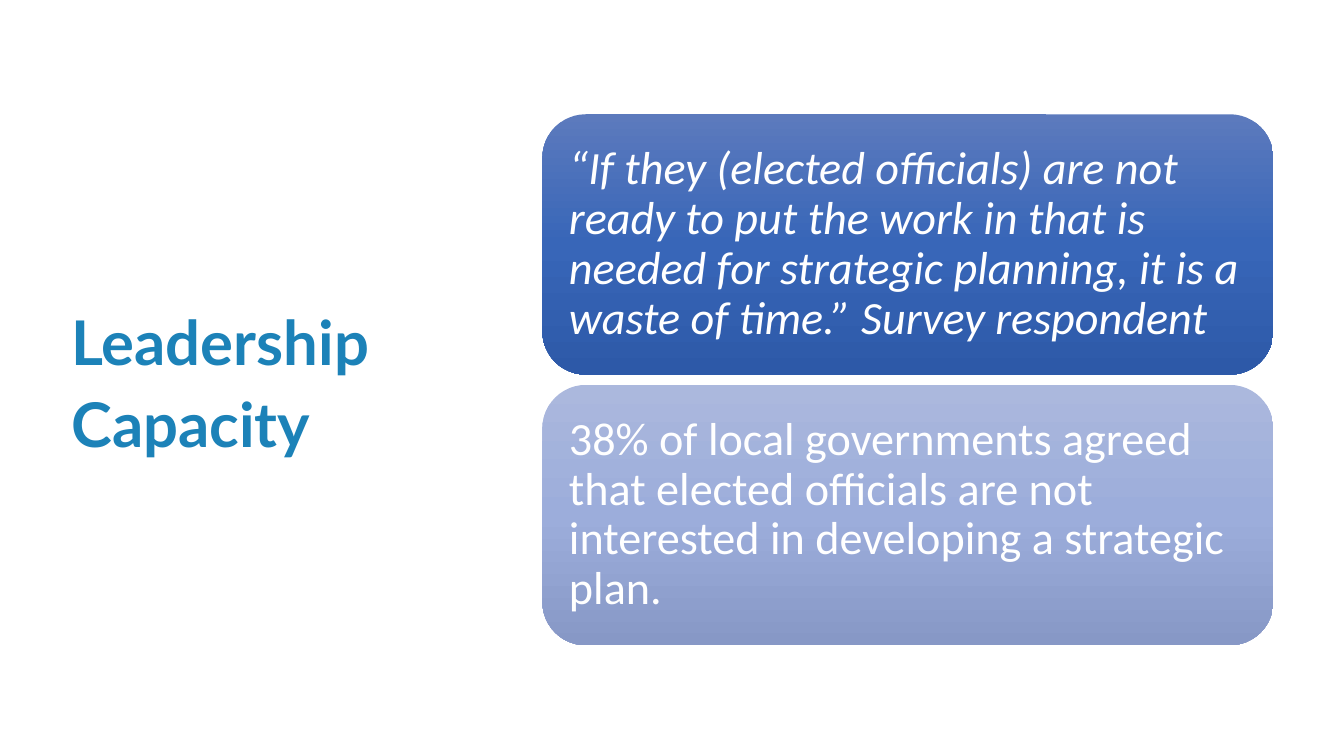
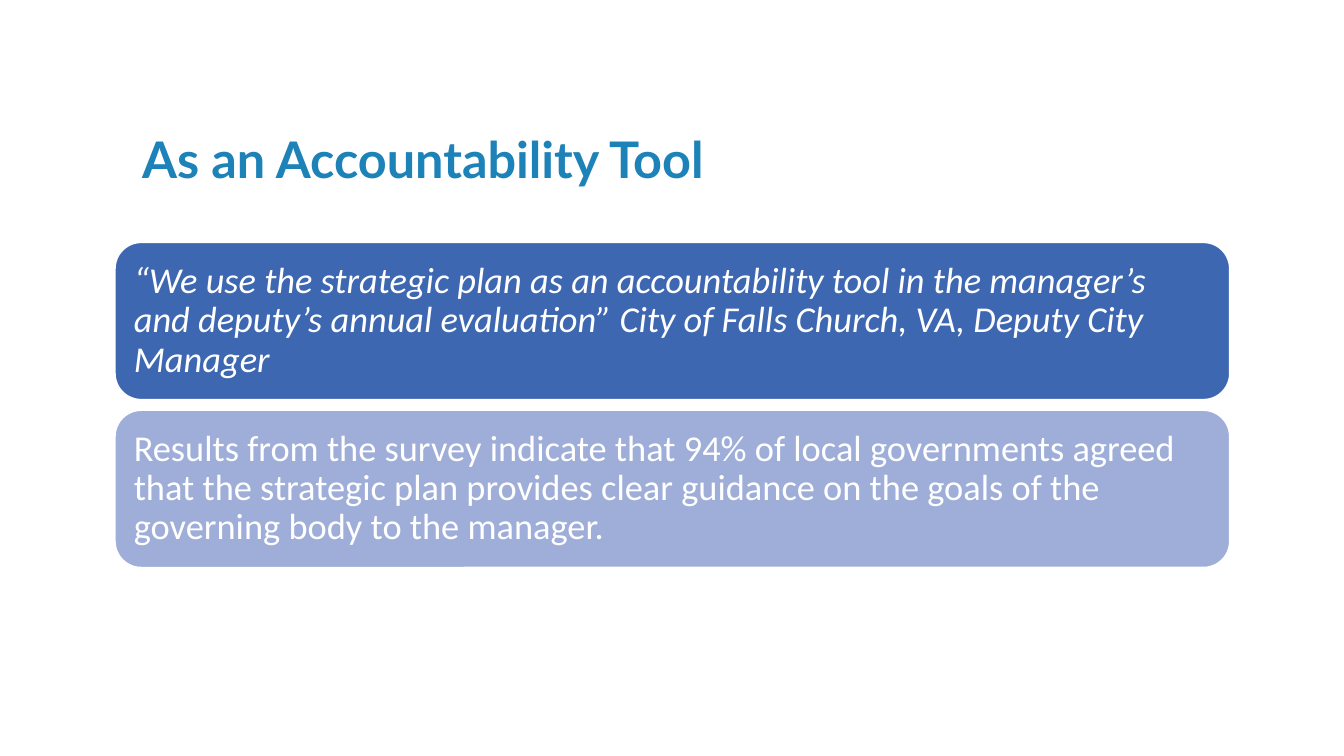
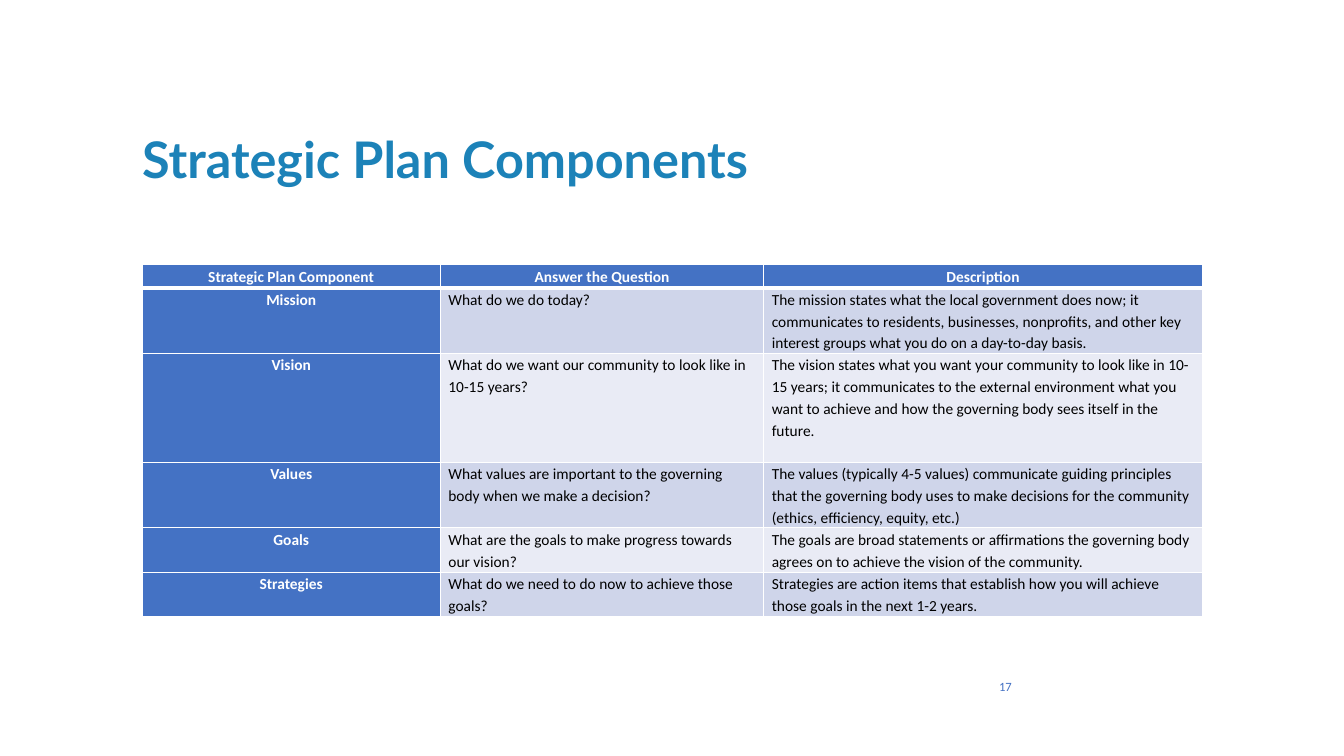
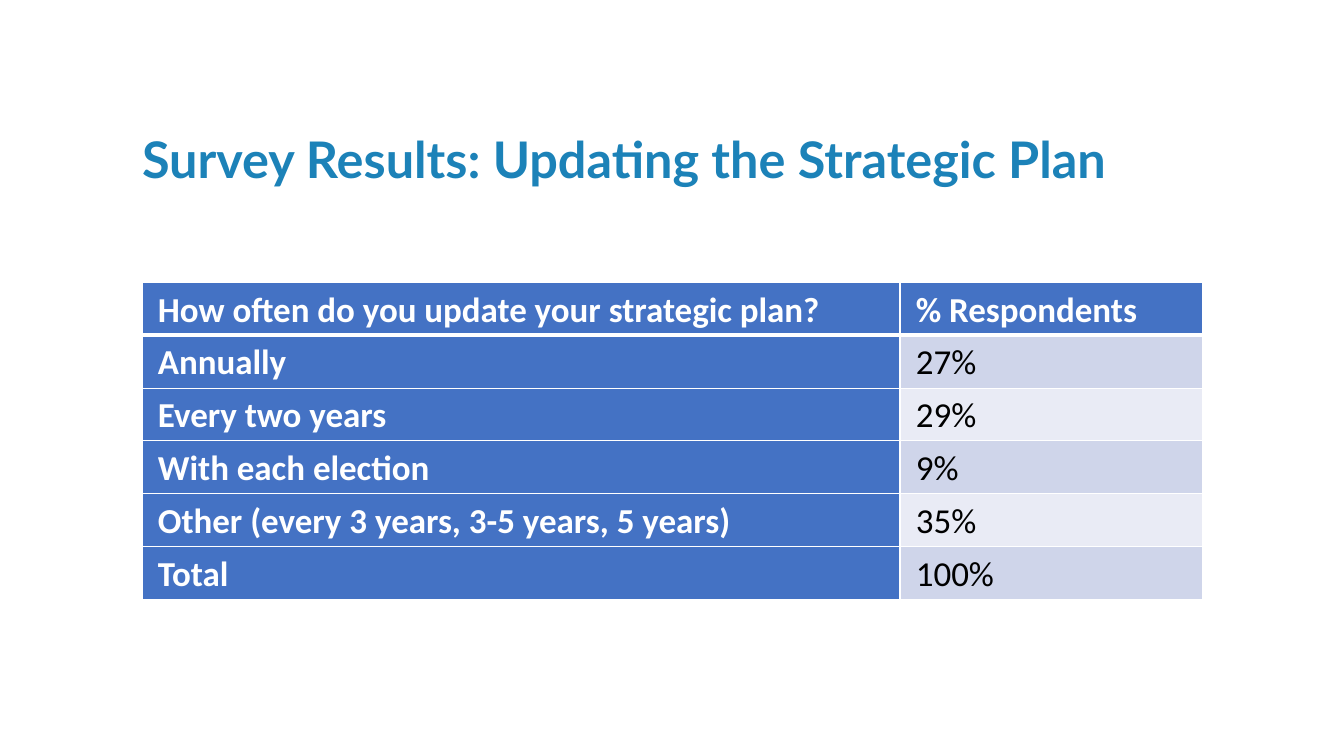
from copy import deepcopy
from dataclasses import dataclass

from lxml import etree
from pptx import Presentation
from pptx.dml.color import RGBColor
from pptx.enum.shapes import MSO_SHAPE
from pptx.enum.text import MSO_ANCHOR, MSO_AUTO_SIZE, PP_ALIGN
from pptx.oxml.ns import qn
from pptx.util import Cm, Pt

ROUNDED = MSO_SHAPE.ROUNDED_RECTANGLE
MIDDLE, BOTTOM = MSO_ANCHOR.MIDDLE, MSO_ANCHOR.BOTTOM
LEFT, CENTER, RIGHT = PP_ALIGN.LEFT, PP_ALIGN.CENTER, PP_ALIGN.RIGHT
NO_AUTOFIT = MSO_AUTO_SIZE.NONE
TITLE_ONLY = 5
EMU_PER_POINT = 12700


@dataclass(frozen=True)
class Theme:
    title_font: str = "Lato"
    body_font: str = "Calibri"
    title: str = "1C82B8"
    accent: str = "4472C4"
    white: str = "FFFFFF"
    black: str = "000000"
    bands: tuple = ("CFD5EA", "E9EBF5")
    gradient_cards: tuple = (("5C7ABD", "3866B8", "2D59A8"),
                             ("ABB8DD", "9CADDB", "8798C6"))
    plain_cards: tuple = (("3E67B2",), ("9FAED8",))
    side_title_size: int = 44
    title_size: int = 36
    large_card_size: int = 33
    card_size: int = 26
    large_table_size: int = 25
    table_size: int = 11
    number_size: int = 9


def color(value):
    return RGBColor.from_string(value)


class Deck:
    def __init__(self, theme):
        self.theme = theme
        self.presentation = Presentation()
        self.presentation.slide_width = Cm(33.87)
        self.presentation.slide_height = Cm(19.05)
        self.slide = None

    def format_text(self, text_frame, size, ink, font=None, bold=False,
                    italic=False, align=LEFT, spacing=1.0):
        for paragraph in text_frame.paragraphs:
            paragraph.alignment = align
            paragraph.line_spacing = spacing
            for run in paragraph.runs:
                run.font.name = font or self.theme.body_font
                run.font.size = Pt(size)
                run.font.bold = bold
                run.font.italic = italic
                run.font.color.rgb = color(ink)

    def set_margins(self, target, horizontal, vertical):
        target.margin_left = target.margin_right = Cm(horizontal)
        target.margin_top = target.margin_bottom = Cm(vertical)

    def place(self, shape, left, top, width, height):
        shape.left, shape.top = Cm(left), Cm(top)
        shape.width, shape.height = Cm(width), Cm(height)

    def add_slide(self, title, beside=False):
        """Start a slide with its title above the content or beside it."""
        layout = self.presentation.slide_layouts[TITLE_ONLY]
        self.slide = self.presentation.slides.add_slide(layout)
        shape = self.slide.shapes.title
        box = (1.8, 3.84, 9.86, 11.38) if beside else (3.58, 1.7, 28.32, 3.05)
        self.place(shape, *box)
        frame = shape.text_frame
        frame.text = title
        frame.word_wrap = True
        frame.auto_size = NO_AUTOFIT
        frame.vertical_anchor = MIDDLE if beside else BOTTOM
        self.set_margins(frame, 0, 0)
        size = self.theme.side_title_size if beside else self.theme.title_size
        self.format_text(frame, size, self.theme.title, self.theme.title_font,
                         bold=True, spacing=1.1)

    def fill_card(self, card, colors):
        """Fill with one colour, or with a downward gradient of several."""
        if len(colors) == 1:
            card.fill.solid()
            card.fill.fore_color.rgb = color(colors[0])
            card.line.color.rgb = color(self.theme.white)
            card.line.width = Pt(1)
            return
        card.line.fill.background()
        card.fill.gradient()
        card.fill.gradient_angle = 270
        stop_list = next(card._element.spPr.iter(qn("a:gsLst")))
        while len(stop_list) < len(colors):
            stop_list.append(deepcopy(stop_list[0]))
        for index, stop in enumerate(card.fill.gradient_stops):
            stop.position = index / (len(colors) - 1)
            stop.color.rgb = color(colors[index])

    def add_cards(self, texts, fills, box, pitch, size, margin):
        """Stack cards; the first one is a quotation in italics."""
        left, top, width, height = box
        for index, (text, colors) in enumerate(zip(texts, fills)):
            card = self.slide.shapes.add_shape(
                ROUNDED, Cm(left), Cm(top + index * pitch), Cm(width), Cm(height))
            card.shadow.inherit = False
            self.fill_card(card, colors)
            frame = card.text_frame
            frame.text = text
            frame.word_wrap = True
            frame.vertical_anchor = MIDDLE
            self.set_margins(frame, margin, margin)
            self.format_text(frame, size, self.theme.white,
                             italic=index == 0, spacing=0.9)

    def add_borders(self, cell, top, bottom):
        properties = cell._tc.get_or_add_tcPr()
        for side, points in (("L", 1), ("R", 1), ("T", top), ("B", bottom)):
            line = etree.SubElement(properties, qn(f"a:ln{side}"),
                                    w=str(points * EMU_PER_POINT))
            fill = etree.SubElement(line, qn("a:solidFill"))
            etree.SubElement(fill, qn("a:srgbClr"), val=self.theme.white)

    def add_table(self, rows, top, widths, heights, size, margin, label_align):
        """Add a table whose first row and first column are headings."""
        table = self.slide.shapes.add_table(
            len(rows), len(widths), Cm(3.58), Cm(top),
            Cm(sum(widths)), Cm(sum(heights))).table
        for column, width in zip(table.columns, widths):
            column.width = Cm(width)
        for row_index, (values, height) in enumerate(zip(rows, heights)):
            table.rows[row_index].height = Cm(height)
            for column_index, value in enumerate(values):
                cell = table.cell(row_index, column_index)
                heading = row_index == 0 or column_index == 0
                self.add_borders(cell, top=3 if row_index == 1 else 1,
                                 bottom=3 if row_index == 0 else 1)
                cell.fill.solid()
                band = self.theme.bands[(row_index - 1) % 2]
                cell.fill.fore_color.rgb = color(
                    self.theme.accent if heading else band)
                self.set_margins(cell, margin, 0)
                cell.text_frame.text = value
                self.format_text(
                    cell.text_frame, size,
                    self.theme.white if heading else self.theme.black,
                    bold=heading, align=label_align if heading else LEFT,
                    spacing=1.15)

    def add_slide_number(self, number):
        box = self.slide.shapes.add_textbox(Cm(23.85), Cm(16.79), Cm(1.9), Cm(1.02))
        frame = box.text_frame
        frame.text = str(number)
        frame.word_wrap = True
        frame.vertical_anchor = MIDDLE
        self.format_text(frame, self.theme.number_size, self.theme.accent,
                         align=RIGHT)


def main():
    theme = Theme()
    deck = Deck(theme)

    deck.add_slide("Leadership Capacity", beside=True)
    deck.add_cards(
        ["“If they (elected officials) are not ready to put the work in that is "
         "needed for strategic planning, it is a waste of time.” Survey respondent",
         "38% of local governments agreed that elected officials are not "
         "interested in developing a strategic plan."],
        theme.gradient_cards, (13.67, 2.88, 18.42, 6.56), 6.82,
        theme.large_card_size, 0.35)

    deck.add_slide("As an Accountability Tool")
    deck.add_cards(
        ["“We use the strategic plan as an accountability tool in the manager’s "
         "and deputy’s annual evaluation” City of Falls Church, VA, Deputy City "
         "Manager",
         "Results from the survey indicate that 94% of local governments agreed "
         "that the strategic plan provides clear guidance on the goals of the "
         "governing body to the manager."],
        theme.plain_cards, (2.9, 6.11, 28.09, 3.96), 4.23, theme.card_size, 0.28)

    deck.add_slide("Strategic Plan Components")
    deck.add_table(
        [("Strategic Plan Component", "Answer the Question", "Description"),
         ("Mission", "What do we do today?",
          "The mission states what the local government does now; it "
          "communicates to residents, businesses, nonprofits, and other key "
          "interest groups what you do on a day-to-day basis."),
         ("Vision", "What do we want our community to look like in 10-15 years?",
          "The vision states what you want your community to look like in 10-15 "
          "years; it communicates to the external environment what you want to "
          "achieve and how the governing body sees itself in the future."),
         ("Values",
          "What values are important to the governing body when we make a decision?",
          "The values (typically 4-5 values) communicate guiding principles that "
          "the governing body uses to make decisions for the community (ethics, "
          "efficiency, equity, etc.)"),
         ("Goals", "What are the goals to make progress towards our vision?",
          "The goals are broad statements or affirmations the governing body "
          "agrees on to achieve the vision of the community."),
         ("Strategies", "What do we need to do now to achieve those goals?",
          "Strategies are action items that establish how you will achieve those "
          "goals in the next 1-2 years.")],
        6.67, (7.52, 8.15, 11.05), (0.58, 1.65, 2.75, 1.65, 1.12, 1.12),
        theme.table_size, 0.2, CENTER)
    deck.add_slide_number(17)

    deck.add_slide("Survey Results: Updating the Strategic Plan")
    survey = [("How often do you update your strategic plan?", "% Respondents"),
              ("Annually", "27%"),
              ("Every two years", "29%"),
              ("With each election", "9%"),
              ("Other (every 3 years, 3-5 years, 5 years)", "35%"),
              ("Total", "100%")]
    deck.add_table(survey, 7.12, (19.1, 7.62), [1.33] * len(survey),
                   theme.large_table_size, 0.4, LEFT)

    deck.presentation.save("out.pptx")


if __name__ == "__main__":
    main()
